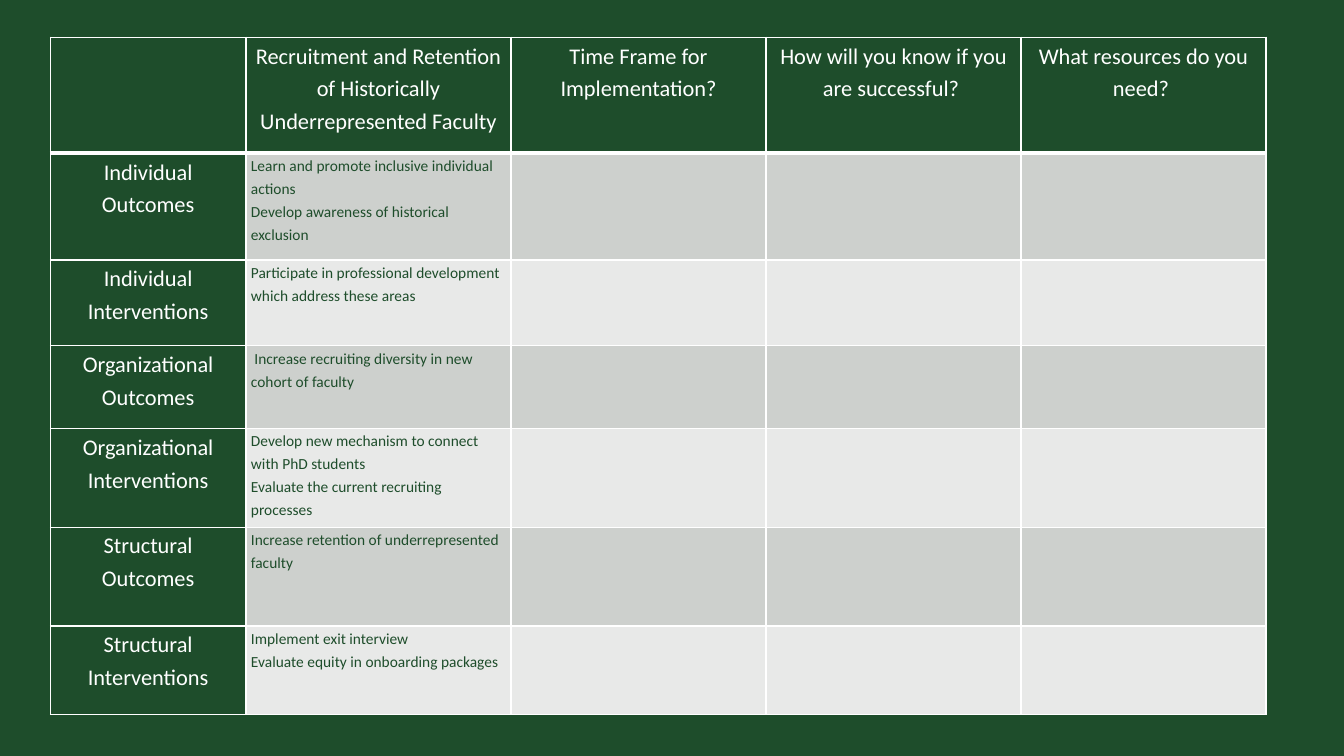
"""Build a faculty recruitment and retention planning slide."""
from lxml.etree import SubElement
from pptx import Presentation
from pptx.dml.color import RGBColor
from pptx.enum.text import PP_ALIGN as Align
from pptx.oxml.ns import qn
from pptx.util import Pt

COLORS = {"green": "1E4D2B", "white": "FFFFFF", "dark": "CDD0CD", "light": "E8E9E8"}
COLUMN_WIDTHS = [139.68, 189.36, 182.16, 182.16, 174.96]
ROW_HEIGHTS = [82.8, 76.32, 61.2, 59.04, 70.56, 70.56, 63.36]
HEADERS = [
    "",
    "Recruitment and Retention of Historically Underrepresented Faculty",
    "Time Frame for Implementation?",
    "How will you know if you are successful? ",
    "What resources do you need? ",
]
PLAN = [
    ("Individual\nOutcomes",
     "Learn and promote inclusive individual actions\nDevelop awareness of historical exclusion"),
    ("Individual\nInterventions",
     "Participate in professional development which address these areas"),
    ("Organizational\nOutcomes",
     " Increase recruiting diversity in new cohort of faculty"),
    ("Organizational\nInterventions",
     "Develop new mechanism to connect with PhD students\nEvaluate the current recruiting processes"),
    ("Structural\nOutcomes",
     "Increase retention of underrepresented faculty"),
    ("Structural\nInterventions",
     "Implement exit interview\nEvaluate equity in onboarding packages"),
]


class PlanSlide:
    """Hold the slide and its table style."""

    def __init__(self, slide, font="Calibri"):
        self.slide = slide
        self.font = font

    def background(self, color):
        fill = self.slide.background.fill
        fill.solid()
        fill.fore_color.rgb = RGBColor.from_string(COLORS[color])

    def table(self, left, top, widths, heights):
        frame = self.slide.shapes.add_table(
            len(heights), len(widths), Pt(left), Pt(top), Pt(sum(widths)), Pt(sum(heights)))
        for column, width in zip(frame.table.columns, widths):
            column.width = Pt(width)
        for row, height in zip(frame.table.rows, heights):
            row.height = Pt(height)
        return frame.table

    def borders(self, cell, top, bottom):
        properties = cell._tc.get_or_add_tcPr()
        for side, width in (("L", 1), ("R", 1), ("T", top), ("B", bottom)):
            line = SubElement(properties, qn(f"a:ln{side}"), w=str(Pt(width)))
            solid = SubElement(line, qn("a:solidFill"))
            SubElement(solid, qn("a:srgbClr"), val=COLORS["white"])

    def cell(self, cell, text, fill, color, size, align, top=1, bottom=1):
        self.borders(cell, top, bottom)
        cell.fill.solid()
        cell.fill.fore_color.rgb = RGBColor.from_string(COLORS[fill])
        cell.margin_left = cell.margin_right = Pt(3.6)
        cell.margin_top = cell.margin_bottom = 0
        cell.text_frame.text = text
        for para in cell.text_frame.paragraphs:
            para.alignment = align
            para.line_spacing = 1.2
            para.font.size = Pt(size)
            for span in para.runs:
                span.font.name = self.font
                span.font.size = Pt(size)
                span.font.bold = False
                span.font.color.rgb = RGBColor.from_string(COLORS[color])


def main():
    deck = Presentation()
    deck.slide_width, deck.slide_height = Pt(960), Pt(540)
    page = PlanSlide(deck.slides.add_slide(deck.slide_layouts[6]))
    page.background("green")
    table = page.table(36, 26.64, COLUMN_WIDTHS, ROW_HEIGHTS)
    for column, header in enumerate(HEADERS):
        page.cell(table.cell(0, column), header, "green", "white", 16, Align.CENTER, bottom=3)
    for row, (label, actions) in enumerate(PLAN, 1):
        top = 3 if row == 1 else 1
        band = "dark" if row % 2 else "light"
        page.cell(table.cell(row, 0), label, "green", "white", 16, Align.CENTER, top)
        for column, text in enumerate([actions, "", "", ""], 1):
            page.cell(table.cell(row, column), text, band, "green", 11, Align.LEFT, top)
    deck.save("out.pptx")


if __name__ == "__main__":
    main()
